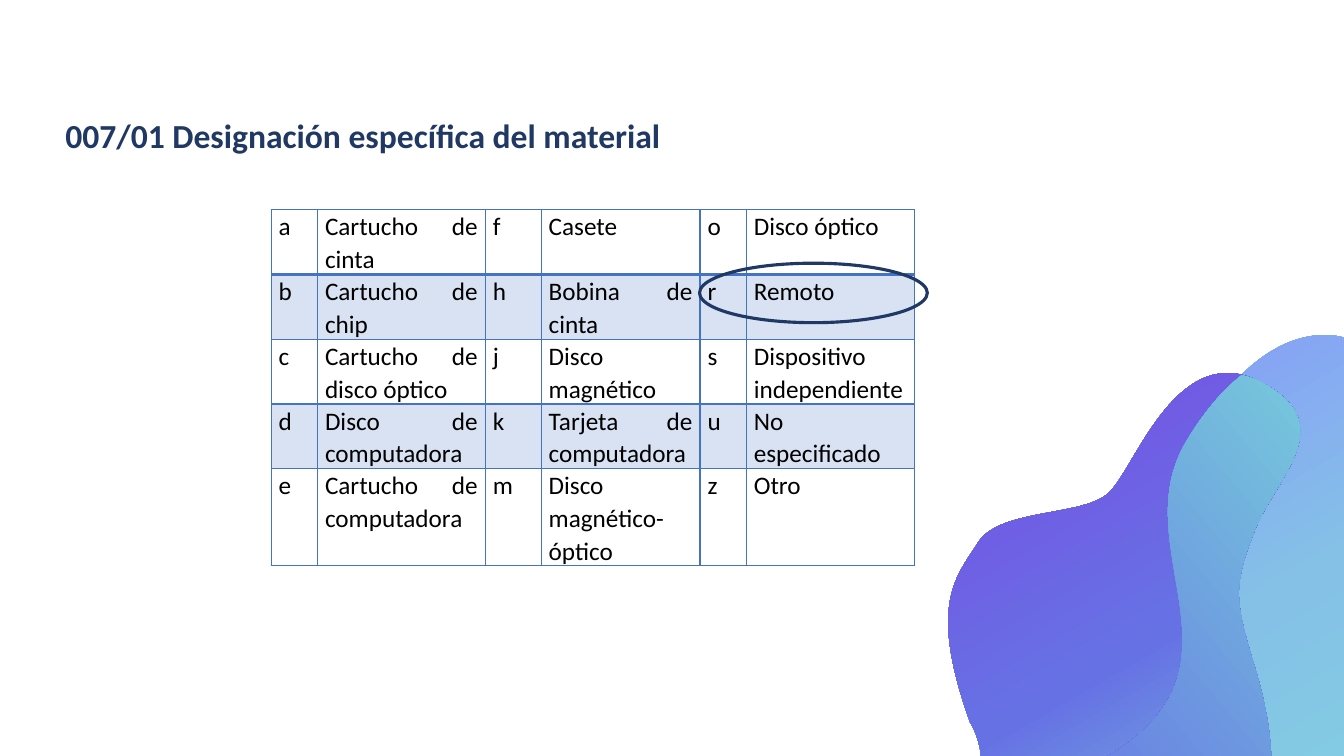
from lxml import etree
from pptx import Presentation
from pptx.dml.color import RGBColor
from pptx.enum.shapes import MSO_SHAPE
from pptx.enum.text import MSO_AUTO_SIZE, PP_ALIGN
from pptx.oxml import parse_xml
from pptx.oxml.ns import nsdecls, qn
from pptx.util import Pt

ELLIPSE = MSO_SHAPE.OVAL
JUSTIFY = PP_ALIGN.JUSTIFY
GROW = MSO_AUTO_SIZE.SHAPE_TO_FIT_TEXT

NAVY = RGBColor(0x20, 0x38, 0x64)
BLACK = RGBColor(0x00, 0x00, 0x00)
TABLE_BLUE = RGBColor(0x44, 0x72, 0xC4)
AQUA = RGBColor(0x80, 0xDE, 0xDE)
SKY = RGBColor(0x85, 0xC1, 0xE7)
PERIWINKLE = RGBColor(0x87, 0x8C, 0xFF)
MINT = RGBColor(0x7C, 0xEF, 0xD8)
TEAL = RGBColor(0x77, 0xCD, 0xDB)
INDIGO = RGBColor(0x66, 0x72, 0xE4)
PURPLE = RGBColor(0x7A, 0x48, 0xE4)
VIOLET = RGBColor(0x88, 0x2B, 0xE5)

MATERIALS = [
    ["a", "Cartucho de cinta", "f", "Casete", "o", "Disco óptico"],
    ["b", "Cartucho de chip", "h ", "Bobina de cinta", "r", "Remoto"],
    ["c", "Cartucho de disco óptico", "j ", "Disco magnético", "s", "Dispositivo independiente"],
    ["d", "Disco de computadora", "k", "Tarjeta de computadora", "u", "No especificado"],
    ["e", "Cartucho de computadora", "m", "Disco magnético-óptico", "z", "Otro "],
]
COLUMN_WIDTHS = [33.1, 119.9, 39.9, 113.5, 33.1, 119.9]
ROW_HEIGHTS = [46, 46, 46, 46, 69]

LIGHT_WAVE = [
    (106, 326),
    (267, 264), (147, 170), (197, 87),
    (246, 4), (302, 14), (318, 31),
    (334, 48), (336, 65), (313, 93),
    (289, 121), (338, 174), (371, 210),
    (404, 247), (417, 329), (337, 344),
    (257, 360), (261, 360), (222, 424),
    (183, 488), (137, 486), (137, 486),
    (137, 486), (59, 478), (49, 414),
    (39, 350), (106, 326), (106, 326),
]
VIOLET_WAVE = [
    (17, 424),
    (17, 424), (44, 487), (162, 447),
    (280, 406), (247, 290), (234, 249),
    (222, 208), (221, 197), (237, 157),
    (254, 118), (298, 82), (239, 52),
    (180, 23), (150, 116), (132, 132),
    (114, 149), (55, 143), (39, 167),
    (24, 191), (2, 210), (33, 296),
    (33, 296), (58, 334), (21, 379),
    (21, 379), (2, 406), (17, 424),
]
SHARED_EDGE = VIOLET_WAVE[12:2:-1]
OVERLAP_WAVE = [
    (162, 447),
    (109, 465), (74, 462), (52, 453),
    (46, 445), (42, 435), (40, 423),
    (30, 359), (97, 336), (97, 336),
    (258, 273), (138, 179), (187, 96),
    (200, 74), (214, 58), (227, 48),
    (231, 49), (235, 50),
] + SHARED_EDGE

WAVES = [
    (LIGHT_WAVE, [(0, AQUA), (54, SKY), (100, PERIWINKLE)], 240),
    (VIOLET_WAVE, [(0, MINT), (51, INDIGO), (100, PURPLE)], 240),
    (OVERLAP_WAVE, [(0, VIOLET), (19, INDIGO), (100, TEAL)], 320),
]


def write_text(frame, text, size=18, color=BLACK, bold=False, spacing=1.07, before=0, after=0):
    paragraph = frame.paragraphs[0]
    paragraph.alignment = JUSTIFY
    paragraph.line_spacing = spacing
    paragraph.space_before, paragraph.space_after = Pt(before), Pt(after)
    run = paragraph.add_run()
    run.text = text
    run.font.name = "Calibri"
    run.font.size = Pt(size)
    run.font.bold = bold
    run.font.color.rgb = color


def bend_segments(shape):
    segments = list(shape._element.iter(qn("a:lnTo")))
    for index in range(0, len(segments), 3):
        group = segments[index:index + 3]
        curve = etree.Element(qn("a:cubicBezTo"))
        group[0].addprevious(curve)
        for segment in group:
            curve.append(segment[0])
            segment.getparent().remove(segment)


def fill_gradient(shape, stops, angle):
    shape.fill.gradient()
    gradient = shape._element.spPr.find(qn("a:gradFill"))
    stop_list = gradient.find(qn("a:gsLst"))
    for stop in list(stop_list):
        stop_list.remove(stop)
    for position, color in stops:
        stop = etree.SubElement(stop_list, qn("a:gs"), pos=str(position * 1000))
        etree.SubElement(stop, qn("a:srgbClr"), val=str(color))
    gradient.find(qn("a:lin")).set("ang", str(angle * 60000))


def add_waves(slide, left, top):
    for nodes, stops, angle in WAVES:
        points = [(left + x, top + y) for x, y in nodes]
        builder = slide.shapes.build_freeform(*points[0], scale=Pt(1))
        builder.add_line_segments(points[1:], close=True)
        wave = builder.convert_to_shape()
        bend_segments(wave)
        wave.shadow.inherit = False
        wave.line.fill.background()
        fill_gradient(wave, stops, angle)


def add_title(slide, left, top, width, height):
    title = slide.shapes.add_textbox(Pt(left), Pt(top), Pt(width), Pt(height))
    title.text_frame.word_wrap = False
    title.text_frame.auto_size = GROW
    write_text(title.text_frame, "007/01 Designación específica del material",
               size=24, color=NAVY, bold=True, spacing=1.5, before=12, after=8)


def add_borders(cell, widths):
    properties = cell._tc.get_or_add_tcPr()
    for side, width in widths.items():
        properties.append(parse_xml(
            f'<a:ln{side} {nsdecls("a")} w="{Pt(width)}"><a:solidFill>'
            f'<a:srgbClr val="{TABLE_BLUE}"/></a:solidFill></a:ln{side}>'
        ))


def fill_band(cell):
    cell.fill.solid()
    cell.fill.fore_color.rgb = TABLE_BLUE
    color = cell._tc.tcPr.find(qn("a:solidFill")).find(qn("a:srgbClr"))
    etree.SubElement(color, qn("a:alpha"), val="20000")


def add_materials_table(slide, left, top):
    frame = slide.shapes.add_table(
        len(ROW_HEIGHTS), len(COLUMN_WIDTHS), Pt(left), Pt(top),
        Pt(sum(COLUMN_WIDTHS)), Pt(sum(ROW_HEIGHTS)))
    table = frame.table
    table.first_row = table.horz_banding = False
    for column, width in zip(table.columns, COLUMN_WIDTHS):
        column.width = Pt(width)
    for row_index, texts in enumerate(MATERIALS):
        table.rows[row_index].height = Pt(ROW_HEIGHTS[row_index])
        for column_index, text in enumerate(texts):
            cell = table.cell(row_index, column_index)
            cell.margin_left = cell.margin_right = Pt(5.4)
            cell.margin_top = cell.margin_bottom = Pt(0)
            write_text(cell.text_frame, text)
            add_borders(cell, {"L": 1, "R": 1, "T": 2 if row_index == 1 else 1,
                               "B": 2 if row_index == 0 else 1})
            if row_index % 2:
                fill_band(cell)
            else:
                cell.fill.background()


def add_highlight(slide, left, top, width, height):
    highlight = slide.shapes.add_shape(ELLIPSE, Pt(left), Pt(top), Pt(width), Pt(height))
    highlight.shadow.inherit = False
    highlight.fill.background()
    highlight.line.color.rgb = NAVY
    highlight.line.width = Pt(2.25)


def main():
    presentation = Presentation()
    presentation.slide_width, presentation.slide_height = Pt(960), Pt(540)
    slide = presentation.slides.add_slide(presentation.slide_layouts[6])
    add_waves(slide, 660, 220)
    add_title(slide, 39.6, 64, 444, 46)
    add_materials_table(slide, 193.7, 149.8)
    add_highlight(slide, 499.7, 188, 162.7, 42.5)
    presentation.save("out.pptx")


if __name__ == "__main__":
    main()
